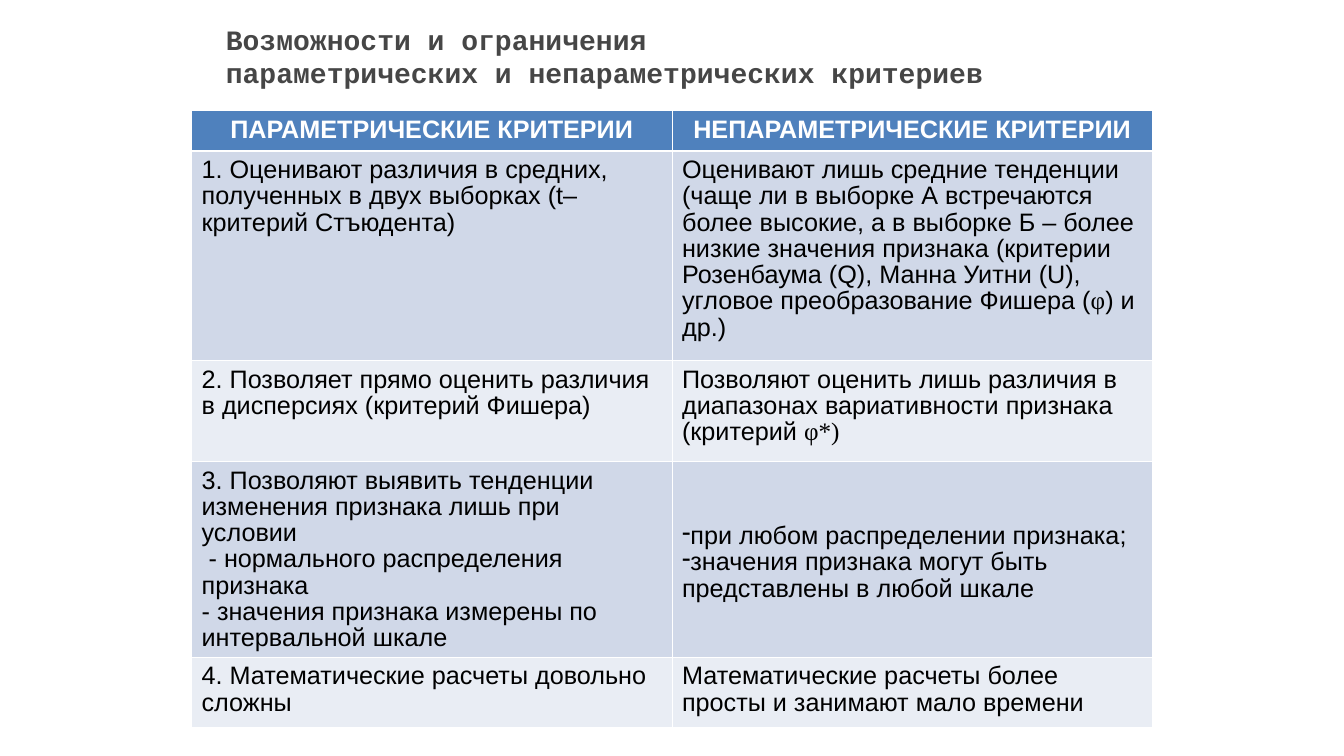
from pptx import Presentation, util as u
from pptx.dml.color import RGBColor
from pptx.enum import text
from pptx.oxml import parse_xml
from pptx.oxml.ns import nsdecls

BLUE, DARK, PALE = "4F81BD", "D0D8E8", "E9EDF4"
WHITE, BLACK, GREY = "FFFFFF", "000000", "464646"
THIN, THICK = 0.45, 1.47

HEADS = ["ПАРАМЕТРИЧЕСКИЕ КРИТЕРИИ", "НЕПАРАМЕТРИЧЕСКИЕ КРИТЕРИИ"]
ROWS = [
    ["1. Оценивают различия в средних, полученных в двух выборках "
     "(t–критерий Стъюдента)",
     "Оценивают лишь средние тенденции (чаще ли в выборке А встречаются "
     "более высокие, а в выборке Б – более низкие значения признака "
     "(критерии Розенбаума (Q), Манна Уитни (U), угловое преобразование "
     "Фишера (|φ|) и др.)"],
    ["2. Позволяет прямо оценить различия в дисперсиях (критерий Фишера)",
     "Позволяют оценить лишь различия в диапазонах вариативности признака "
     "(критерий |φ*)"],
    ["3. Позволяют выявить тенденции изменения признака лишь при условии\n"
     " - нормального распределения признака\n"
     "- значения признака измерены по интервальной шкале",
     "•при любом распределении признака;\n"
     "•значения признака могут быть представлены в любой шкале"],
    ["4. Математические расчеты довольно сложны",
     "Математические расчеты более просты и занимают мало времени"],
]


def color(code):
    return RGBColor.from_string(code)


def grid(n):
    """Length of n grid units, ten to the inch."""
    return u.Inches(n / 10)


class Deck:
    def __init__(self):
        self.prs = Presentation()
        self.prs.slide_width, self.prs.slide_height = u.Inches(13.33), u.Inches(7.5)
        self.slide = self.prs.slides.add_slide(self.prs.slide_layouts[5])

    def font(self, item, name, size, code, bold=False):
        font = item.font
        font.name, font.size, font.bold = name, u.Pt(size), bold
        font.color.rgb = color(code)

    def title(self, words, x, y, w, h):
        box = self.slide.shapes.title
        box.left, box.top, box.width, box.height = map(grid, (x, y, w, h))
        frame = box.text_frame
        frame.auto_size = text.MSO_AUTO_SIZE.NONE
        frame.vertical_anchor = text.MSO_ANCHOR.MIDDLE
        para = frame.paragraphs[0]
        para.text = words
        para.alignment = text.PP_ALIGN.LEFT
        self.font(para, "Courier New", 20, GREY, True)

    def edges(self, cell, top, base):
        props = cell._tc.get_or_add_tcPr()
        for i, (side, width) in enumerate(zip("LRTB", (THIN, THIN, top, base))):
            props.insert(i, parse_xml(
                f'<a:ln{side} {nsdecls("a")} w="{u.Pt(width)}"><a:solidFill>'
                f'<a:srgbClr val="{WHITE}"/></a:solidFill></a:ln{side}>'))

    def label(self, cell, words, head):
        """Fill a cell: newline splits paragraphs, a leading • makes a dash
        bullet, and each second part between bars is set in Times."""
        frame = cell.text_frame
        for i, line in enumerate(words.split("\n")):
            para = frame.add_paragraph() if i else frame.paragraphs[0]
            para.line_spacing = 0.93
            para.alignment = text.PP_ALIGN.CENTER if head else text.PP_ALIGN.LEFT
            if line.startswith("•"):
                para._p.get_or_add_pPr().append(
                    parse_xml(f'<a:buChar {nsdecls("a")} char="-"/>'))
            for j, part in enumerate(line.lstrip("•").split("|")):
                run = para.add_run()
                run.text = part
                self.font(run, "Times New Roman" if j % 2 else "Arial", 18,
                          WHITE if head else BLACK, head)

    def table(self, rows, x, y, wide, highs):
        count = len(rows[0])
        table = self.slide.shapes.add_table(
            len(rows), count, grid(x), grid(y),
            grid(wide * count), grid(sum(highs))).table
        for col in table.columns:
            col.width = grid(wide)
        for r, (row, high) in enumerate(zip(rows, highs)):
            table.rows[r].height = grid(high)
            for c, words in enumerate(row):
                cell = table.cell(r, c)
                cell.margin_left = cell.margin_right = grid(1)
                # The bulleted cell starts two lines lower.
                cell.margin_top = grid(6.2 if words.startswith("•") else 0.7)
                cell.margin_bottom = grid(0.5)
                cell.fill.solid()
                cell.fill.fore_color.rgb = color(
                    BLUE if r == 0 else DARK if r % 2 else PALE)
                self.edges(cell, THICK if r == 1 else THIN,
                           THICK if r == 0 else THIN)
                self.label(cell, words, r == 0)


def main():
    deck = Deck()
    deck.title("Возможности и ограничения \v"
               "параметрических и непараметрических критериев",
               21.4, 1.6, 90.8, 7.9)
    deck.table([HEADS] + ROWS, 19, 10.95, 47.65, [4, 20.8, 10, 18, 7])
    deck.prs.save("out.pptx")


if __name__ == "__main__":
    main()
